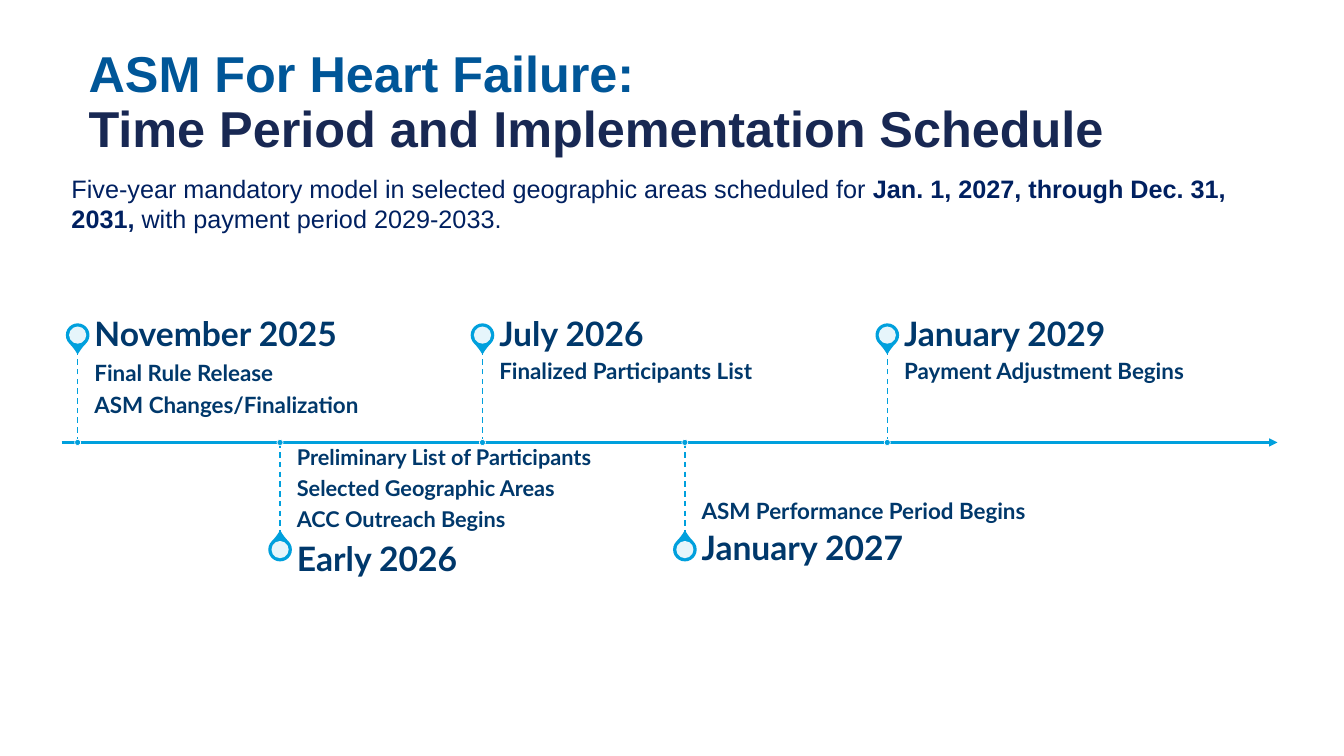
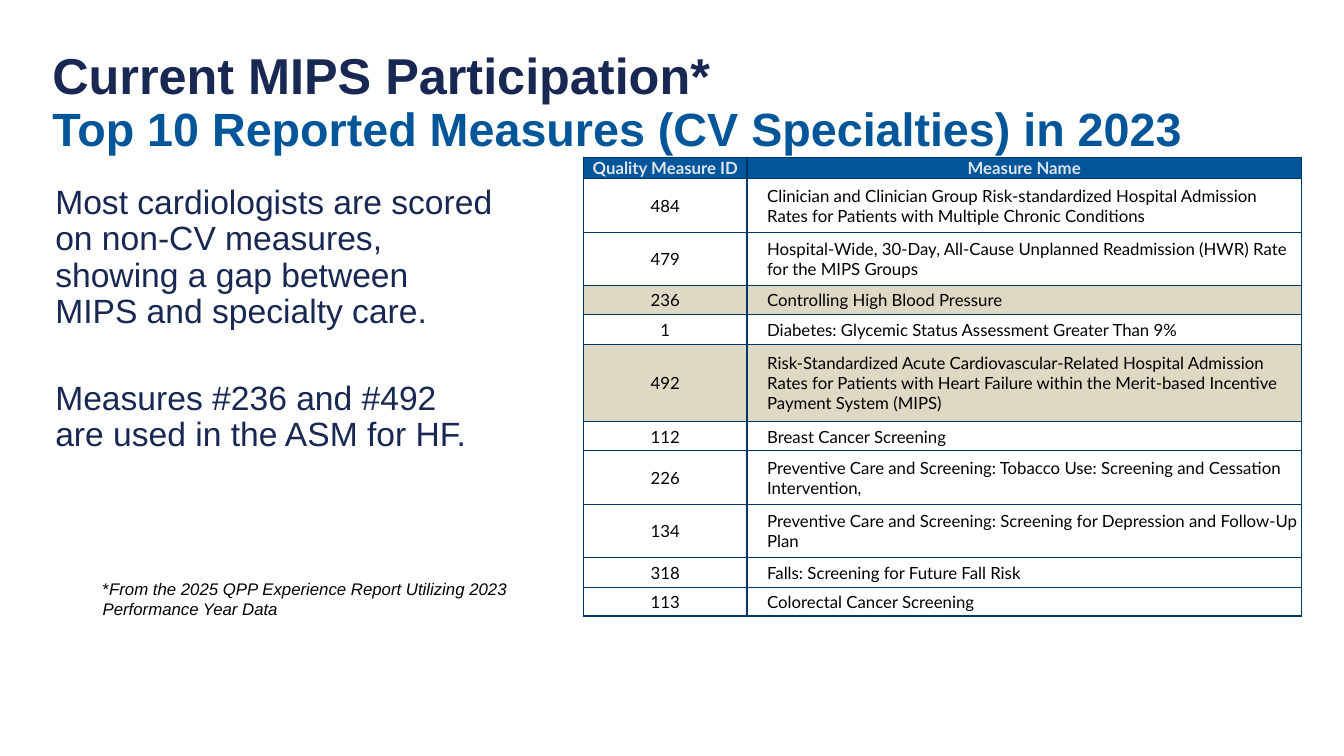
"""Build two slides on the heart failure model: a timeline and a measure table."""
import pptx
import pptx.chart.data
import pptx.dml.color
import pptx.enum.dml
import pptx.enum.shapes
import pptx.enum.text
import pptx.oxml
import pptx.oxml.ns
import pptx.util

RGB = pptx.dml.color.RGBColor
Pt = pptx.util.Pt
KIND = pptx.enum.shapes.MSO_SHAPE
SIDE = pptx.enum.text.MSO_ANCHOR
ALIGN = pptx.enum.text.PP_ALIGN

BLUE = RGB(0x00, 0x56, 0x98)
NAVY = RGB(0x18, 0x28, 0x53)
DEEP = RGB(0x00, 0x20, 0x60)
INK = RGB(0x00, 0x38, 0x6B)
CYAN = RGB(0x00, 0xA0, 0xDD)
WHITE = RGB(0xFF, 0xFF, 0xFF)
BLACK = RGB(0x00, 0x00, 0x00)
PALE = RGB(0xDE, 0xE5, 0xF1)
SAND = RGB(0xDD, 0xD9, 0xC3)
NS = pptx.oxml.ns.nsdecls("a")

deck = pptx.Presentation()
deck.slide_width = pptx.util.Inches(13.33)
deck.slide_height = pptx.util.Inches(7.5)
X = deck.slide_width / 100
Y = deck.slide_height / 100


def fill(frame, paras, size, color, font="Arial", bold=False, lead=1.0, after=0, before=0):
    """Write paragraphs of runs; a run is a text and its own changes."""
    for n, runs in enumerate(paras):
        para = frame.add_paragraph() if n else frame.paragraphs[0]
        para.line_spacing = lead
        para.space_after = Pt(after)
        para.space_before = Pt(before if n else 0)
        for text, own in runs:
            if text == "\n":
                para.add_line_break()
                continue
            run = para.add_run()
            run.text = text
            run.font.name = font
            run.font.size = Pt(own.get("size", size))
            run.font.bold = own.get("bold", bold)
            run.font.italic = own.get("slant", False)
            run.font.color.rgb = own.get("color", color)


def box(slide, x, y, w, h, anchor=SIDE.TOP, pad=(7.2, 3.6, 7.2, 3.6)):
    """Add a wrapping text box placed by percent of the slide."""
    frame = slide.shapes.add_textbox(int(x * X), int(y * Y), int(w * X), int(h * Y)).text_frame
    frame.word_wrap = True
    frame.vertical_anchor = anchor
    frame.margin_left, frame.margin_top, frame.margin_right, frame.margin_bottom = map(Pt, pad)
    return frame


heads = [
    (5.85, [("ASM For Heart Failure:", {"color": BLUE}), ("\n", {}),
            ("Time Period and Implementation Schedule", {})]),
    (3.15, [("Current MIPS Participation*", {}), ("\n", {}),
            ("Top 10 Reported Measures (CV Specialties) in 2023", {"color": BLUE, "size": 33.3})]),
]
pages = []
for left, runs in heads:
    page = deck.slides.add_slide(deck.slide_layouts[6])
    fill(box(page, left, 5.2, 94.15, 17.07, SIDE.MIDDLE), [runs], 36, NAVY, bold=True, lead=0.9)
    pages.append(page)
plan, score = pages

fill(box(plan, 4.58, 22.27, 92.1, 13.47), [[
    ("Five-year mandatory model in selected geographic areas scheduled for ", {}),
    ("Jan. 1, 2027, through Dec. 31, 2031, ", {"bold": True}),
    ("with payment period 2029-2033.", {})]], 18, DEEP)

AXIS, FIRST, STEP, REACH = 58.53, 5.78, 15.06, 12.07
stops = [
    ("November 2025", ["Final Rule Release", "ASM Changes/Finalization"], 16, 0),
    ("Early 2026", ["Preliminary List of Participants", "Selected Geographic Areas",
                    "ACC Outreach Begins"], 15.5, 1.4),
    ("July 2026", ["Finalized Participants List"], 16, 0),
    ("January 2027", ["ASM Performance Period Begins"], 16, 0),
    ("January 2029", ["Payment Adjustment Begins"], 16, 0),
]
lines = [(4.58, AXIS, 95.05, AXIS, 1.5)]
marks = []
for n, (date, notes, size, drop) in enumerate(stops):
    mid = FIRST + n * STEP
    low = n % 2 == 1
    end = AXIS + REACH if low else AXIS - REACH
    pin = end + 2.1 if low else end - 2.13
    lines.append((mid, AXIS, mid, end, 1))
    marks += [(KIND.TEAR, mid, pin, 1.65, CYAN, CYAN, 1, 315 if low else 135),
              (KIND.OVAL, mid, pin, 1.28, WHITE, None, 0, 0),
              (KIND.OVAL, mid, AXIS, 0.45, CYAN, WHITE, 0.5, 0)]
    left = mid + 1.25
    top = AXIS + drop if low else end
    pad = (0, 12, 0, 8) if low else (0, 8, 8, 12)
    frame = box(plan, left, top, 25.05, 12, SIDE.BOTTOM if low else SIDE.TOP, pad)
    fill(frame, [[(note, {})] for note in notes], size, INK, "Lato", True, 0.9, 0.35 * size)
    frame = box(plan, left, end + drop if low else end - 4.2, 25.05, 4.27, SIDE.MIDDLE, (0, 0, 12, 0))
    fill(frame, [[(date, {})]], 24, INK, "Lato", True, 0.9, 8.4)

for x, y, to, end, width in lines:
    line = plan.shapes.add_connector(pptx.enum.shapes.MSO_CONNECTOR.STRAIGHT,
                                     int(x * X), int(y * Y), int(to * X), int(end * Y))
    line.line.color.rgb = CYAN
    line.line.width = Pt(width)
    if y == end:
        line.line._get_or_add_ln().append(pptx.oxml.parse_xml(f'<a:tailEnd {NS} type="triangle"/>'))
    else:
        line.line.dash_style = pptx.enum.dml.MSO_LINE.DASH
    line._element.spPr.append(pptx.oxml.parse_xml(f"<a:effectLst {NS}/>"))

for kind, x, y, wide, color, edge, width, turn in marks:
    side = wide * X
    mark = plan.shapes.add_shape(kind, int(x * X - side / 2), int(y * Y - side / 2), int(side), int(side))
    mark.shadow.inherit = False
    mark.rotation = turn
    mark.fill.solid()
    mark.fill.fore_color.rgb = color
    if kind == KIND.TEAR:
        mark.adjustments[0] = 1.15
    if edge is None:
        mark.line.fill.background()
        tint = mark._element.spPr.find(".//" + pptx.oxml.ns.qn("a:srgbClr"))
        tint.append(pptx.oxml.parse_xml(f'<a:alpha {NS} val="90000"/>'))
    else:
        mark.line.color.rgb = edge
        mark.line.width = Pt(width)

fill(box(score, 3.38, 23.9, 34.13, 38), [
    [("Most cardiologists are scored on non-CV measures, showing a gap between MIPS and specialty care.", {})],
    [("Measures #236 and #492 are used in the ASM for HF.", {})]],
    24, NAVY, lead=0.9, before=36)
fill(box(score, 6.9, 75.87, 34, 6.67), [[
    ("*", {}),
    ("From the 2025 QPP Experience Report Utilizing 2023 Performance Year Data", {"slant": True})]],
    12, BLACK)

rows = [
    ("Quality Measure ID", "Measure Name", 0),
    ("484", "Clinician and Clinician Group Risk-standardized Hospital Admission Rates for Patients "
            "with Multiple Chronic Conditions", 2),
    ("479", "Hospital-Wide, 30-Day, All-Cause Unplanned Readmission (HWR) Rate for the MIPS Groups", 2),
    ("236", "Controlling High Blood Pressure", 1),
    ("1", "Diabetes: Glycemic Status Assessment Greater Than 9%", 1),
    ("492", "Risk-Standardized Acute Cardiovascular-Related Hospital Admission Rates for Patients with "
            "Heart Failure within the Merit-based Incentive Payment System (MIPS)", 3),
    ("112", "Breast Cancer Screening", 1),
    ("226", "Preventive Care and Screening: Tobacco Use: Screening and Cessation Intervention,", 2),
    ("134", "Preventive Care and Screening: Screening for Depression and Follow-Up Plan", 2),
    ("318", "Falls: Screening for Future Fall Risk", 1),
    ("113", "Colorectal Cancer Screening", 1),
]
grid = score.shapes.add_table(len(rows), 2, int(43.43 * X), int(20.8 * Y), int(53.41 * X), int(60 * Y)).table
grid.first_row = grid.horz_banding = False
for col, wide in zip(grid.columns, (12.15, 41.26)):
    col.width = int(wide * X)
for r, (code, name, count) in enumerate(rows):
    head = r == 0
    grid.rows[r].height = int((0.67 + 3.2 * count if count else 2) * Y)
    for c, text in enumerate((code, name)):
        cell = grid.cell(r, c)
        cell.vertical_anchor = SIDE.MIDDLE
        cell.margin_left = Pt(14.4 if c and not head else 0.7)
        cell.margin_top = cell.margin_right = Pt(0.7)
        cell.margin_bottom = 0
        fill(cell.text_frame, [[(text, {})]], 12, PALE if head else BLACK, "Lato", head)
        cell.text_frame.paragraphs[0].alignment = ALIGN.LEFT if c and not head else ALIGN.CENTER
        thick = {"L": 1, "R": 1, "T": 1 if r < 2 else 0.25, "B": 1 if head or r == len(rows) - 1 else 0.25}
        for edge, width in thick.items():
            cell._tc.get_or_add_tcPr().append(pptx.oxml.parse_xml(
                f'<a:ln{edge} {NS} w="{Pt(width)}"><a:solidFill><a:srgbClr val="{INK}"/></a:solidFill></a:ln{edge}>'))
        if head or code in ("236", "492"):
            cell.fill.solid()
            cell.fill.fore_color.rgb = BLUE if head else SAND
        else:
            cell.fill.background()

deck.save("out.pptx")
